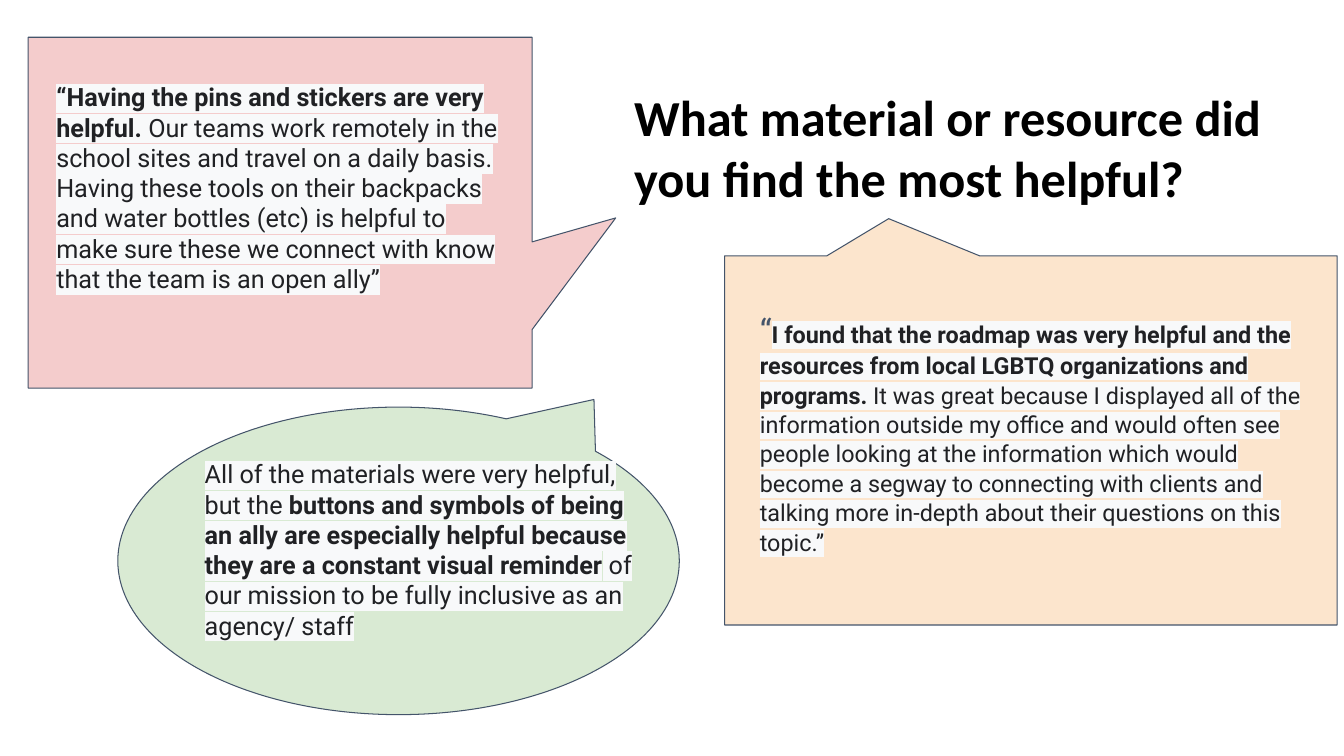
from lxml.etree import SubElement
from pptx import Presentation
from pptx.dml.color import RGBColor
from pptx.enum.shapes import MSO_SHAPE
from pptx.enum.text import MSO_ANCHOR, MSO_AUTO_SIZE, PP_ALIGN
from pptx.oxml.ns import qn
from pptx.util import Cm, Pt

INK, SLATE, HIGHLIGHT = "202124", "44546A", "F8F9FA"
INSET = Cm(0.33)


def rgb(value):
    return RGBColor.from_string(value)


def set_frame(tf, anchor):
    tf.word_wrap = True
    tf.auto_size = MSO_AUTO_SIZE.NONE
    tf.vertical_anchor = anchor
    tf.margin_left = tf.margin_right = INSET
    tf.margin_top = tf.margin_bottom = INSET
    p = tf.paragraphs[0]
    p.alignment = PP_ALIGN.LEFT
    return p


def add_run(p, text, size, bold=False, color=INK, font="Roboto", highlight=HIGHLIGHT):
    r = p.add_run()
    r.text = text
    r.font.size = Pt(size)
    r.font.bold = bold
    r.font.name = font
    r.font.color.rgb = rgb(color)
    if highlight:
        # The highlight has to follow the fill directly
        rPr = r.font._element
        mark = SubElement(rPr, qn("a:highlight"))
        SubElement(mark, qn("a:srgbClr"), val=highlight)
        rPr.find(qn("a:solidFill")).addnext(mark)


def add_callout(s, kind, box, adjustments, fill):
    sp = s.shapes.add_shape(kind, *map(Cm, box))
    for i, value in enumerate(adjustments):
        sp.adjustments[i] = value
    sp.shadow.inherit = False
    sp.fill.solid()
    sp.fill.fore_color.rgb = rgb(fill)
    sp.line.color.rgb = rgb(SLATE)
    sp.line.width = Pt(0.75)


def add_quote(s, box, size, parts):
    """Add a quotation from (text, bold) parts and return its paragraph."""
    tf = s.shapes.add_textbox(*map(Cm, box)).text_frame
    p = set_frame(tf, MSO_ANCHOR.TOP)
    for text, bold in parts:
        add_run(p, text, size, bold)
    return p


def add_title(s, box, text):
    title = s.shapes.title
    title.left, title.top, title.width, title.height = map(Cm, box)
    p = set_frame(title.text_frame, MSO_ANCHOR.BOTTOM)
    add_run(p, text, 36, True, "000000", "Calibri", None)


def main():
    prs = Presentation()
    prs.slide_width, prs.slide_height = Cm(33.87), Cm(19.05)
    s = prs.slides.add_slide(prs.slide_layouts[5])

    # Title
    add_title(s, (15.65, 1.19, 16.59, 4.37),
              "What material or resource did you find the most helpful?")

    # Pink quote: pins and stickers
    add_callout(s, MSO_SHAPE.RECTANGULAR_CALLOUT, (0.71, 0.94, 12.7, 8.84),
                (0.666, 0.015), "F4CCCC")
    add_quote(s, (1.09, 1.73, 12.07, 6.07), 18, [
        ("“Having the pins and stickers are very helpful.", True),
        (" Our teams work remotely in the school sites and travel on a daily basis. "
         "Having these tools on their backpacks and water bottles (etc) is helpful to "
         "make sure these we connect with know that the team is an open ally”", False),
    ])

    # Orange quote: roadmap, with a larger opening mark
    add_callout(s, MSO_SHAPE.ROUNDED_RECTANGULAR_CALLOUT, (18.26, 6.45, 15.44, 9.3),
                (-0.232, -0.601, 0), "FCE5CD")
    p = add_quote(s, (18.82, 7.42, 14.88, 8.26), 16.7, [])
    p.line_spacing = 1.05
    add_run(p, "“", 24, color=SLATE, highlight=None)
    add_run(p, "I found that the roadmap was very helpful and the resources from "
               "local LGBTQ organizations and programs.", 16.7, True)
    add_run(p, " It was great because I displayed all of the information outside my "
               "office and would often see people looking at the information which "
               "would become a segway to connecting with clients and talking more "
               "in-depth about their questions on this topic.”", 16.7)

    # Green quote: buttons and symbols
    add_callout(s, MSO_SHAPE.OVAL_CALLOUT, (2.97, 10.26, 14.15, 7.75),
                (0.348, -0.525), "D9EAD3")
    add_quote(s, (4.83, 11.23, 11.73, 5.31), 18, [
        ("All of the materials were very helpful, but the ", False),
        ("buttons and symbols of being an ally are especially helpful because they "
         "are a constant visual reminder", True),
        (" of our mission to be fully inclusive as an agency/ staff", False),
    ])

    prs.save("out.pptx")


if __name__ == "__main__":
    main()
